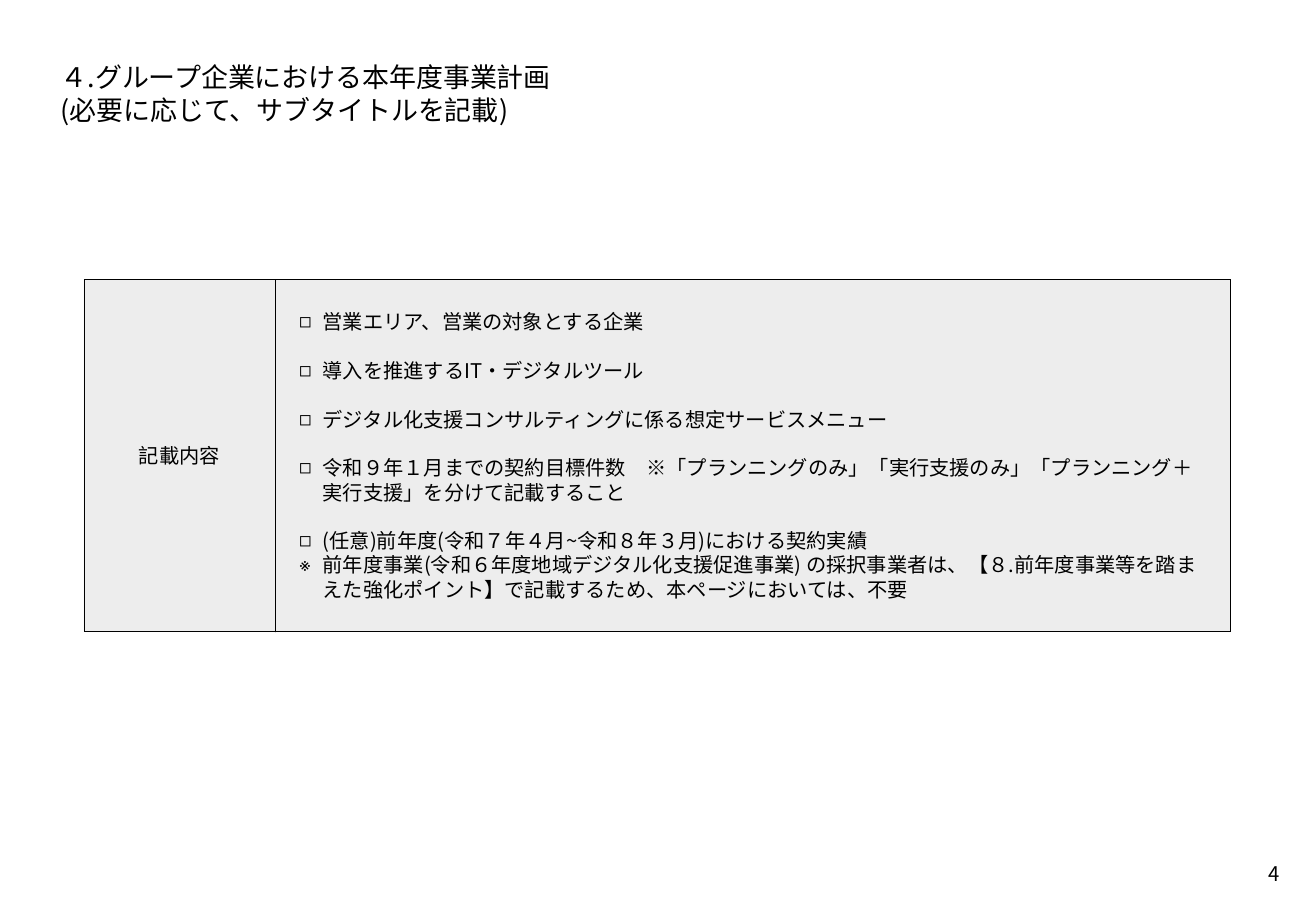
import pptx
import pptx.util
import pptx.dml.color
import pptx.enum.dml
import pptx.enum.shapes
import pptx.enum.text
import pptx.oxml.ns
from lxml import etree

Pt = pptx.util.Pt
qn = pptx.oxml.ns.qn
Anchor = pptx.enum.text.MSO_ANCHOR
Align = pptx.enum.text.PP_ALIGN
FONT = "Noto Sans CJK JP"
COLORS = {"text": "000000", "panel": "EDEDED", "border": "000000"}


def place(box, area, inset, anchor, wrap=True):
    box.left, box.top, box.width, box.height = [Pt(value) for value in area]
    settings = {
        "margin_left": Pt(inset), "margin_top": Pt(inset),
        "margin_right": Pt(inset), "margin_bottom": Pt(inset),
        "vertical_anchor": anchor, "word_wrap": wrap,
        "auto_size": pptx.enum.text.MSO_AUTO_SIZE.NONE,
    }
    for name, value in settings.items():
        setattr(box.text_frame, name, value)


def write(para, text, size, align, before=0):
    para.text = text
    settings = {
        "alignment": align, "line_spacing": Pt(size * 1.2),
        "space_before": Pt(before), "space_after": Pt(0),
    }
    for name, value in settings.items():
        setattr(para, name, value)
    for span in para.runs:
        for name, value in {"size": Pt(size), "name": FONT, "bold": False}.items():
            setattr(span.font, name, value)
        span.font.color.rgb = pptx.dml.color.RGBColor.from_string(COLORS["text"])
        east_asian = etree.Element(qn("a:ea"), typeface=FONT)
        span.font._element.find(qn("a:latin")).addnext(east_asian)


deck = pptx.Presentation()
deck.slide_width, deck.slide_height = Pt(780), Pt(540)
page = deck.slides.add_slide(deck.slide_layouts[1])

title = page.shapes.title
place(title, (21.6, 21.6, 737.3, 56.9), 14.4, Anchor.TOP)
write(title.text_frame.paragraphs[0],
      "４.グループ企業における本年度事業計画\v(必要に応じて、サブタイトルを記載)",
      16, Align.LEFT)

number = page.shapes.add_textbox(0, 0, 0, 0)
place(number, (737.3, 503.3, 28.1, 28.1), 7.2, Anchor.TOP, False)
write(number.text_frame.paragraphs[0], "4", 12, Align.RIGHT)

content = page.placeholders[1]
place(content, (162.9, 165.6, 566.5, 208.8), 14.4, Anchor.MIDDLE)
items = [
    ("◻", "営業エリア、営業の対象とする企業", 0),
    ("◻", "導入を推進するIT・デジタルツール", 14.4),
    ("◻", "デジタル化支援コンサルティングに係る想定サービスメニュー", 14.4),
    ("◻", "令和９年１月までの契約目標件数　※「プランニングのみ」「実行支援のみ」"
          "「プランニング＋実行支援」を分けて記載すること", 14.4),
    ("◻", "(任意)前年度(令和７年４月~令和８年３月)における契約実績", 14.4),
    ("※", "前年度事業(令和６年度地域デジタル化支援促進事業) の採択事業者は、"
          "【８.前年度事業等を踏まえた強化ポイント】で記載するため、"
          "本ページにおいては、不要", 0),
]
for index, (mark, text, before) in enumerate(items):
    frame = content.text_frame
    para = frame.add_paragraph() if index else frame.paragraphs[0]
    write(para, text, 12, Align.LEFT, before)
    properties = para._p.get_or_add_pPr()
    properties.set("marL", str(Pt(14)))
    properties.set("indent", str(-Pt(14)))
    etree.SubElement(properties, qn("a:buChar"), char=mark)

heading = page.shapes.add_shape(pptx.enum.shapes.MSO_SHAPE.RECTANGLE, 0, 0, 0, 0)
heading.shadow.inherit = False
place(heading, (49.7, 165.6, 113.2, 208.8), 7.2, Anchor.MIDDLE)
write(heading.text_frame.paragraphs[0], "記載内容", 12, Align.CENTER)

for box in (content, heading):
    box.fill.solid()
    box.fill.fore_color.rgb = pptx.dml.color.RGBColor.from_string(COLORS["panel"])
    box.line.color.rgb = pptx.dml.color.RGBColor.from_string(COLORS["border"])
    box.line.width = Pt(0.25)
    box.line.dash_style = pptx.enum.dml.MSO_LINE.ROUND_DOT

deck.save("out.pptx")
